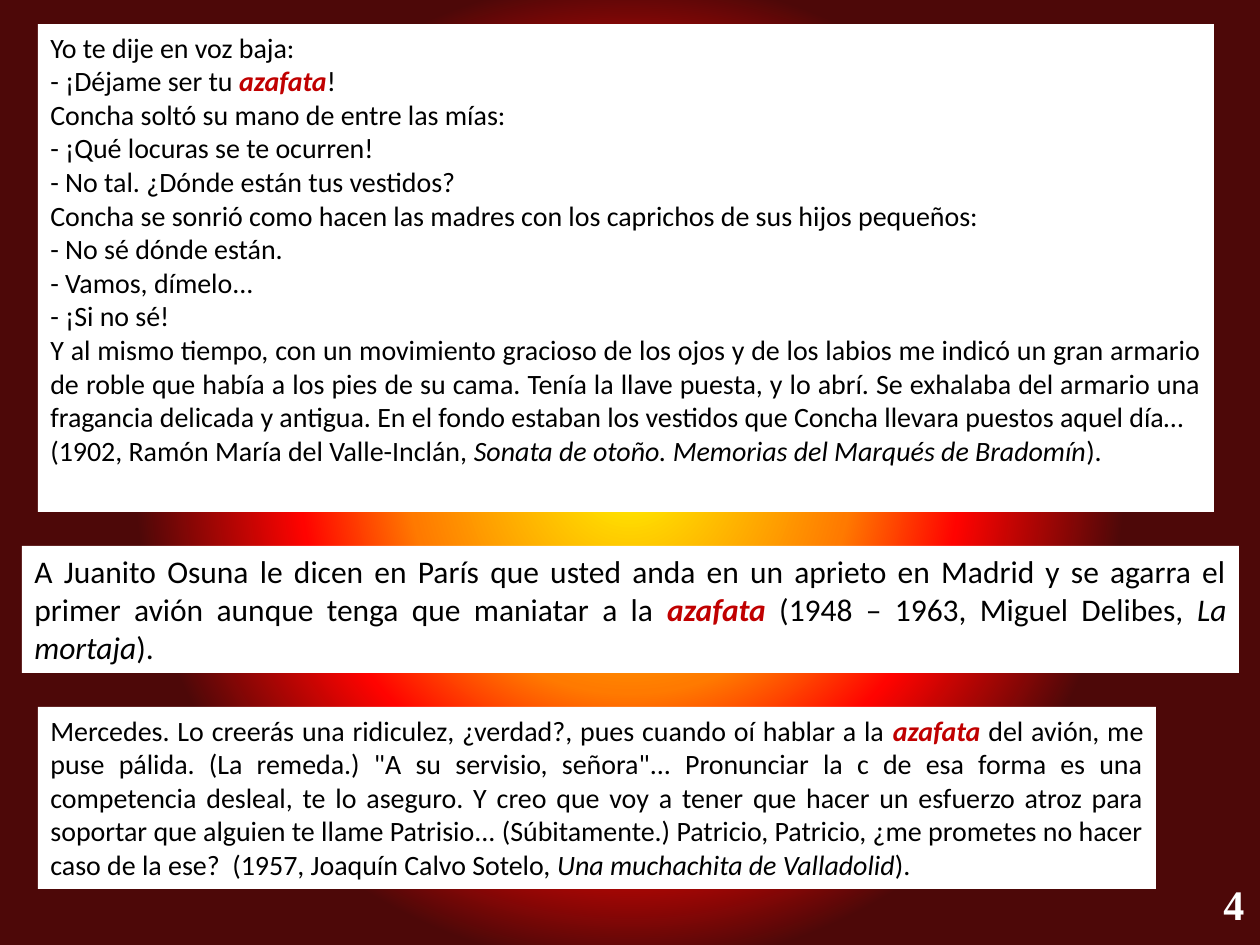
from lxml import etree
from pptx import Presentation
from pptx.dml.color import RGBColor
from pptx.enum.shapes import MSO_SHAPE
from pptx.enum.text import MSO_ANCHOR, PP_ALIGN
from pptx.oxml.ns import qn
from pptx.util import Pt

PX = 914400 // 126
RECTANGLE = MSO_SHAPE.RECTANGLE
TOP = MSO_ANCHOR.TOP
JUSTIFY, CENTER = PP_ALIGN.JUSTIFY, PP_ALIGN.CENTER
BLACK = RGBColor(0x00, 0x00, 0x00)
WHITE = RGBColor(0xFF, 0xFF, 0xFF)
RED = RGBColor(0xC0, 0x00, 0x00)
FIRE = [
    (0, RGBColor(0xFF, 0xF2, 0x00)),
    (28, RGBColor(0xFF, 0x7A, 0x00)),
    (42, RGBColor(0xFF, 0x03, 0x00)),
    (63, RGBColor(0x4D, 0x08, 0x08)),
]


def add_span(para, text, size, color, font="Calibri", bold=False, italic=False):
    span = para.add_run()
    span.text = text
    span.font.name = font
    span.font.size = Pt(size)
    span.font.color.rgb = color
    span.font.bold = bold
    span.font.italic = italic


deck = Presentation()
deck.slide_width, deck.slide_height = 1260 * PX, 945 * PX
page = deck.slides.add_slide(deck.slide_layouts[6])

# Background: circular fire gradient from the centre
page.background.fill.gradient()
gradient = page.element.find(".//" + qn("a:gradFill"))
for child in list(gradient):
    gradient.remove(child)
stops = etree.SubElement(gradient, qn("a:gsLst"))
for percent, color in FIRE:
    stop = etree.SubElement(stops, qn("a:gs"), pos=str(percent * 1000))
    etree.SubElement(stop, qn("a:srgbClr"), val=str(color))
circle = etree.SubElement(gradient, qn("a:path"))
circle.set("path", "circle")
etree.SubElement(circle, qn("a:fillToRect"), l="50000", t="50000", r="50000", b="50000")

# Quotations: each paragraph is a list of (text, style) runs
sonata = [
    [("Yo te dije en voz baja:", "plain")],
    [("- ¡Déjame ser tu ", "plain"), ("azafata", "key"), ("!", "plain")],
    [("Concha soltó su mano de entre las mías:", "plain")],
    [("- ¡Qué locuras se te ocurren!", "plain")],
    [("- No tal. ¿Dónde están tus vestidos?", "plain")],
    [("Concha se sonrió como hacen las madres con los caprichos de sus hijos pequeños:", "plain")],
    [("- No sé dónde están.", "plain")],
    [("- Vamos, dímelo...", "plain")],
    [("- ¡Si no sé!", "plain")],
    [("Y al mismo tiempo, con un movimiento gracioso de los ojos y de los labios me "
      "indicó un gran armario de roble que había a los pies de su cama. Tenía la llave "
      "puesta, y lo abrí. Se exhalaba del armario una fragancia delicada y antigua. En el "
      "fondo estaban los vestidos que Concha llevara puestos aquel día…", "plain")],
    [("(1902, Ramón María del Valle-Inclán, ", "plain"),
     ("Sonata de otoño. Memorias del Marqués de Bradomín", "title"), (").", "plain")],
]
mortaja = [
    [("A Juanito Osuna le dicen en París que usted anda en un aprieto en Madrid y se "
      "agarra el primer avión aunque tenga que maniatar a la ", "plain"),
     ("azafata", "key"), (" (1948 – 1963, Miguel Delibes, ", "plain"),
     ("La mortaja", "title"), (").", "plain")],
]
muchachita = [
    [("Mercedes. Lo creerás una ridiculez, ¿verdad?, pues cuando oí hablar a la ", "plain"),
     ("azafata ", "key"),
     ("del avión, me puse pálida. (La remeda.) \"A su servisio, señora\"... Pronunciar la c "
      "de esa forma es una competencia desleal, te lo aseguro. Y creo que voy a tener que "
      "hacer un esfuerzo atroz para soportar que alguien te llame Patrisio... "
      "(Súbitamente.) Patricio, Patricio, ¿me prometes no hacer caso de la ese?  "
      "(1957, Joaquín Calvo Sotelo, ", "plain"),
     ("Una muchachita de Valladolid", "title"), (").", "plain")],
]
quotations = [
    (38, 24, 1176, 488, 16, sonata),
    (22, 546, 1217, 127, 18, mortaja),
    (38, 707, 1118, 182, 16, muchachita),
]
for left, top, width, height, size, paragraphs in quotations:
    box = page.shapes.add_shape(RECTANGLE, left * PX, top * PX, width * PX, height * PX)
    box.shadow.inherit = False
    box.fill.solid()
    box.fill.fore_color.rgb = WHITE
    box.line.fill.background()
    frame = box.text_frame
    frame.word_wrap = True
    frame.vertical_anchor = TOP
    for index, runs in enumerate(paragraphs):
        para = frame.add_paragraph() if index else frame.paragraphs[0]
        para.alignment = JUSTIFY
        for text, style in runs:
            add_span(para, text, size, RED if style == "key" else BLACK,
                     bold=style == "key", italic=style != "plain")

# Slide number
number = page.shapes.add_textbox(1211 * PX, 872 * PX, 45 * PX, 66 * PX)
number.text_frame.word_wrap = False
para = number.text_frame.paragraphs[0]
para.alignment = CENTER
add_span(para, "4", 24, WHITE, font="Times New Roman", bold=True)

deck.save("out.pptx")
